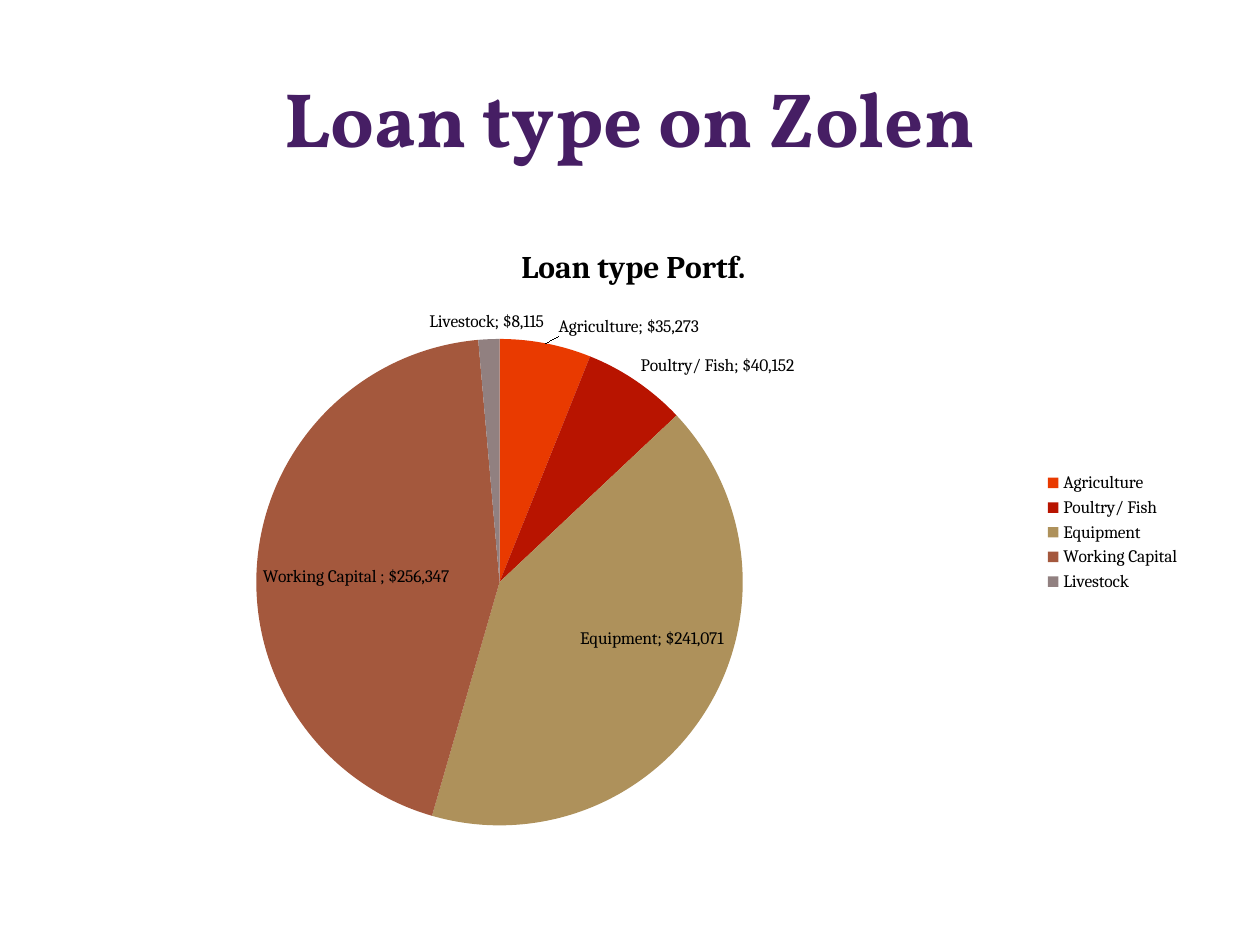
from lxml import etree
from pptx import Presentation
from pptx import util as u
from pptx.chart import data as chart_data
from pptx.dml.color import RGBColor
from pptx.enum import chart as chart_enum, text
from pptx.oxml import ns

WIDTH, HEIGHT = u.Inches(10), u.Inches(7.5)
MARGIN = 0.05
COLORS = {
    "title": "461E64",
    "text": "000000",
    "Agriculture": "E93A00",
    "Poultry/ Fish": "B81400",
    "Equipment": "AE915B",
    "Working Capital ": "A4583D",
    "Livestock": "918080",
}
LOANS = {
    "Agriculture": 35273,
    "Poultry/ Fish": 40152,
    "Equipment": 241071,
    "Working Capital ": 256347,
    "Livestock": 8115,
}
CHART_TITLE = " Loan type Portf."
MONEY = '"$"#,##0_);[Red]\\("$"#,##0\\)'
PIE_AREA = {"x": 0.17, "y": 0.19, "w": 0.43, "h": 0.78}


def rgb(name):
    """Return the named colour."""
    return RGBColor.from_string(COLORS[name])


def band(top, height):
    """Return a box between the side margins, from shares of the slide height."""
    return (int(WIDTH * MARGIN), int(HEIGHT * top),
            int(WIDTH * (1 - 2 * MARGIN)), int(HEIGHT * height))


def style_font(font, name, size, color, bold=False):
    """Set the family, size, colour and weight of a font."""
    font.name, font.size, font.bold = name, u.Pt(size), bold
    font.color.rgb = rgb(color)


def add_title(slide, words, box):
    """Add the centred slide title."""
    frame = slide.shapes.add_textbox(*box).text_frame
    frame.word_wrap = True
    frame.vertical_anchor = text.MSO_ANCHOR.MIDDLE
    frame.text = words
    paragraph = frame.paragraphs[0]
    paragraph.alignment = text.PP_ALIGN.CENTER
    style_font(paragraph.runs[0].font, "Vollkorn", 44, "title", True)


def place_plot(chart, area):
    """Fix the inner plot area, given as shares of the chart."""
    plot_area = chart.plots[0]._element.getparent()
    for layout in plot_area.findall(ns.qn("c:layout")):
        plot_area.remove(layout)
    layout = etree.Element(ns.qn("c:layout"))
    manual = etree.SubElement(layout, ns.qn("c:manualLayout"))
    settings = {"layoutTarget": "inner", "xMode": "edge", "yMode": "edge", **area}
    for tag, value in settings.items():
        etree.SubElement(manual, ns.qn(f"c:{tag}")).set("val", str(value))
    plot_area.insert(0, layout)


def label_slices(series):
    """Label each slice with its category and value."""
    labels = series.data_labels
    labels.show_category_name = labels.show_value = True
    labels.number_format, labels.number_format_is_linked = MONEY, False
    labels.position = chart_enum.XL_LABEL_POSITION.BEST_FIT
    style_font(labels.font, "Cambria", 10, "text")
    separator = etree.Element(ns.qn("c:separator"))
    separator.text = "; "
    labels._element.find(ns.qn("c:showBubbleSize")).addnext(separator)


def add_pie(slide, title, values, box):
    """Add a pie chart with a title, legend and slice labels."""
    data = chart_data.CategoryChartData(number_format=MONEY)
    data.categories = list(values)
    data.add_series(title, list(values.values()))
    chart = slide.shapes.add_chart(chart_enum.XL_CHART_TYPE.PIE, *box, data).chart
    style_font(chart.font, "Cambria", 10, "text")
    chart.has_title = True
    chart.chart_title.include_in_layout = False
    frame = chart.chart_title.text_frame
    frame.text = title
    style_font(frame.paragraphs[0].runs[0].font, "Cambria", 18, "text", True)
    chart.has_legend = True
    chart.legend.position = chart_enum.XL_LEGEND_POSITION.RIGHT
    chart.legend.include_in_layout = False
    series = chart.plots[0].series[0]
    for index, category in enumerate(values):
        fill = series.points[index].format.fill
        fill.solid()
        fill.fore_color.rgb = rgb(category)
    label_slices(series)
    place_plot(chart, PIE_AREA)


def main():
    """Build and save the loan type slide."""
    presentation = Presentation()
    presentation.slide_width, presentation.slide_height = WIDTH, HEIGHT
    slide = presentation.slides.add_slide(presentation.slide_layouts[6])
    add_title(slide, "Loan type on Zolen", band(0.04, 1 / 6))
    add_pie(slide, CHART_TITLE, LOANS, band(7 / 30, 0.66))
    presentation.save("out.pptx")


if __name__ == "__main__":
    main()
